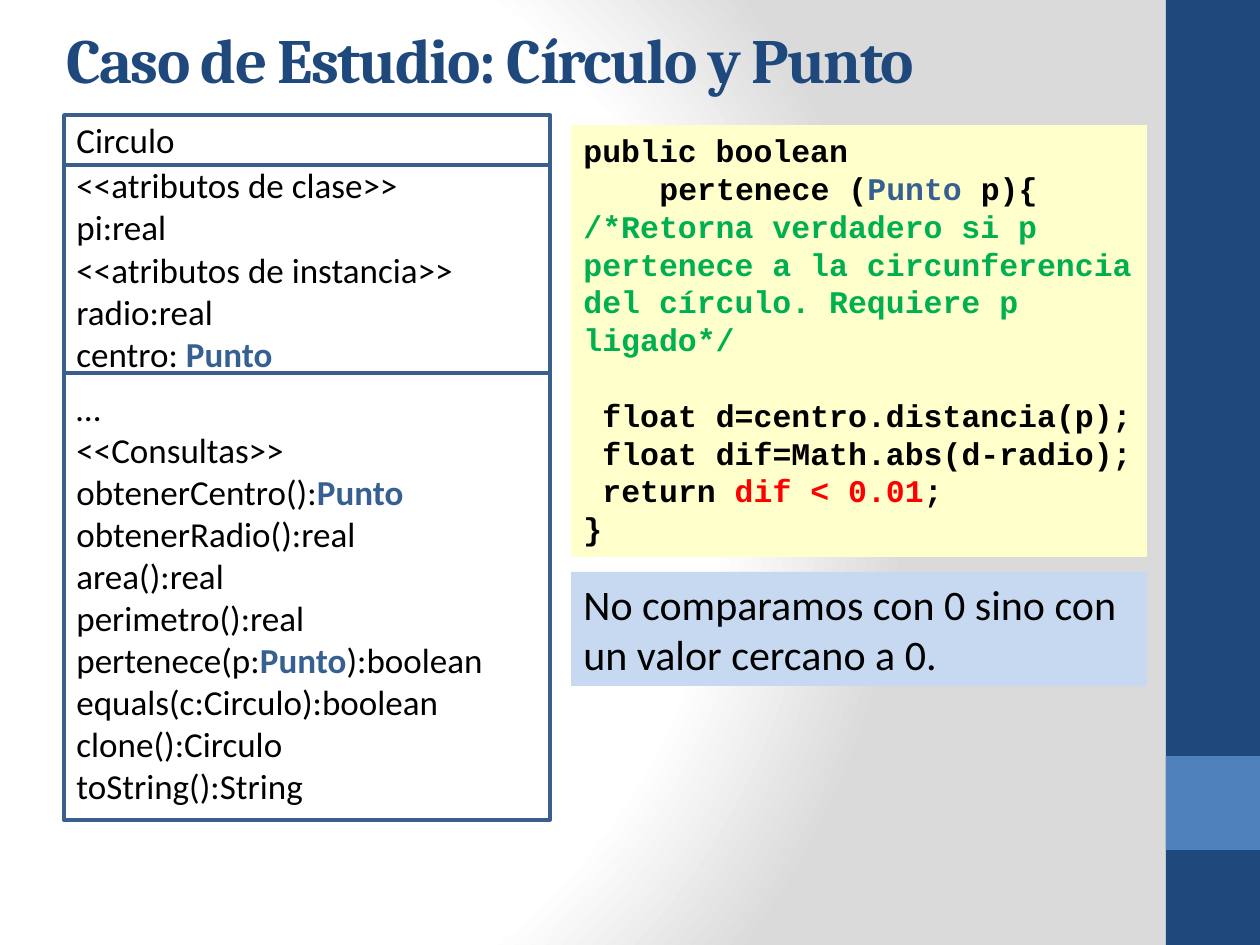
from lxml.etree import SubElement
from pptx import Presentation
from pptx.dml.color import RGBColor
from pptx.enum.shapes import MSO_SHAPE
from pptx.enum.text import MSO_ANCHOR, MSO_AUTO_SIZE, PP_ALIGN
from pptx.oxml.ns import qn
from pptx.util import Pt

EMU_PER_PX = 914400 / 126
NAVY, BLUE, BLACK, WHITE = "1F497D", "4F81BD", "000000", "FFFFFF"
TYPE_BLUE, COMMENT_GREEN, ALERT_RED = "376092", "00B050", "FF0000"
OUTLINE = "3A5F8C"


def px(length):
    return round(length * EMU_PER_PX)


def rgb(hex_color):
    return RGBColor.from_string(hex_color)


class SlideBuilder:
    """Holds the text style and the current slide."""

    def __init__(self, slide, font="Calibri", size=20):
        self.slide = slide
        self.font = font
        self.size = size

    def background(self, stops, focus):
        """Radial gradient; focus gives the l, t, r, b insets in percent."""
        self.slide.background.fill.gradient()
        gradient = self.slide.element.find(".//" + qn("a:gradFill"))
        for child in list(gradient):
            gradient.remove(child)
        stop_list = SubElement(gradient, qn("a:gsLst"))
        for position, color in stops:
            stop = SubElement(stop_list, qn("a:gs"), pos=str(position * 1000))
            SubElement(stop, qn("a:srgbClr"), val=color)
        circle = SubElement(gradient, qn("a:path"))
        circle.set("path", "circle")
        SubElement(circle, qn("a:fillToRect"),
                   {side: str(inset * 1000) for side, inset in zip("ltrb", focus)})

    def run(self, paragraph, text, color=BLACK, bold=False, font=None, size=None):
        run = paragraph.add_run()
        run.text = text
        run.font.name = font or self.font
        run.font.size = Pt(size or self.size)
        run.font.bold = bold
        run.font.color.rgb = rgb(color)
        return run

    def title(self, text, left, top, width, height):
        title = self.slide.shapes.title
        title.left, title.top = px(left), px(top)
        title.width, title.height = px(width), px(height)
        frame = title.text_frame
        frame.word_wrap = True
        frame.auto_size = MSO_AUTO_SIZE.NONE
        frame.vertical_anchor = MSO_ANCHOR.BOTTOM
        paragraph = frame.paragraphs[0]
        paragraph.alignment = PP_ALIGN.LEFT
        run = self.run(paragraph, text, NAVY, True, "Cambria", 36)
        run.font._element.set("spc", "-100")

    def box(self, left, top, width, height, fill, line=None):
        box = self.slide.shapes.add_shape(
            MSO_SHAPE.RECTANGLE, px(left), px(top), px(width), px(height))
        box.shadow.inherit = False
        box.fill.solid()
        box.fill.fore_color.rgb = rgb(fill)
        if line:
            box.line.color.rgb = rgb(line)
            box.line.width = Pt(2)
        else:
            box.line.fill.background()
        return box

    def text(self, box, lines, anchor=MSO_ANCHOR.MIDDLE, **style):
        """Each line is (indent in px, space before in pt, runs)."""
        frame = box.text_frame
        frame.word_wrap = True
        frame.vertical_anchor = anchor
        for number, (indent, gap, runs) in enumerate(lines):
            paragraph = frame.add_paragraph() if number else frame.paragraphs[0]
            paragraph.alignment = PP_ALIGN.LEFT
            paragraph.space_before = Pt(gap)
            paragraph._p.get_or_add_pPr().set("marL", str(px(indent)))
            for text, *color in runs:
                self.run(paragraph, text, *color, **style)

    def class_section(self, top, bottom, lines):
        """One compartment of the class diagram; the type Punto stands out."""
        section = self.box(64, top, 486, bottom - top, WHITE, OUTLINE)
        rows = []
        for line in lines:
            before, punto, after = line.partition("Punto")
            runs = [(before,), (punto, TYPE_BLUE, True), (after,)]
            rows.append((0, 0, [run for run in runs if run[0]]))
        self.text(section, rows)


def main():
    deck = Presentation()
    deck.slide_width, deck.slide_height = px(1260), px(945)
    builder = SlideBuilder(deck.slides.add_slide(deck.slide_layouts[5]))

    # Background and side band
    builder.background([(0, WHITE), (75, WHITE), (100, "DADADA")], (20, 50, 100, 50))
    builder.box(1166, 0, 94, 945, NAVY)
    builder.box(1166, 756, 94, 94, BLUE)

    builder.title("Caso de Estudio: Círculo y Punto", 54, 6, 1040, 96)

    # Method code
    comment = ("/*Retorna verdadero si p pertenece a la circunferencia "
               "del círculo. Requiere p ligado*/")
    code_lines = [
        (0, 0, [("public boolean",)]),
        (76, 0, [("pertenece (",), ("Punto", TYPE_BLUE), (" p){",)]),
        (0, 0, [(comment, COMMENT_GREEN)]),
        (19, 21.6, [("float d=centro.distancia(p);",)]),
        (19, 0, [("float dif=Math.abs(d-radio);",)]),
        (19, 0, [("return ",), ("dif < 0.01", ALERT_RED), (";",)]),
        (0, 0, [("}",)]),
    ]
    code = builder.box(571, 125, 576, 432, "FFFFCC")
    builder.text(code, code_lines, MSO_ANCHOR.TOP,
                 font="Courier New", size=18, bold=True)

    # Remark on the comparison
    remark = builder.box(571, 572, 576, 114, "C6D9F1")
    builder.text(remark, [(0, 6, [("No comparamos con 0 sino con un valor cercano a 0.",)])],
                 MSO_ANCHOR.TOP, size=24)

    # Class diagram
    builder.class_section(115, 165, ["Circulo"])
    builder.class_section(165, 373, [
        "<<atributos de clase>>", "pi:real", "<<atributos de instancia>>",
        "radio:real", "centro: Punto"])
    builder.class_section(373, 820, [
        "…", "<<Consultas>>", "obtenerCentro():Punto", "obtenerRadio():real",
        "area():real", "perimetro():real", "pertenece(p:Punto):boolean",
        "equals(c:Circulo):boolean", "clone():Circulo", "toString():String"])

    deck.save("out.pptx")


if __name__ == "__main__":
    main()
